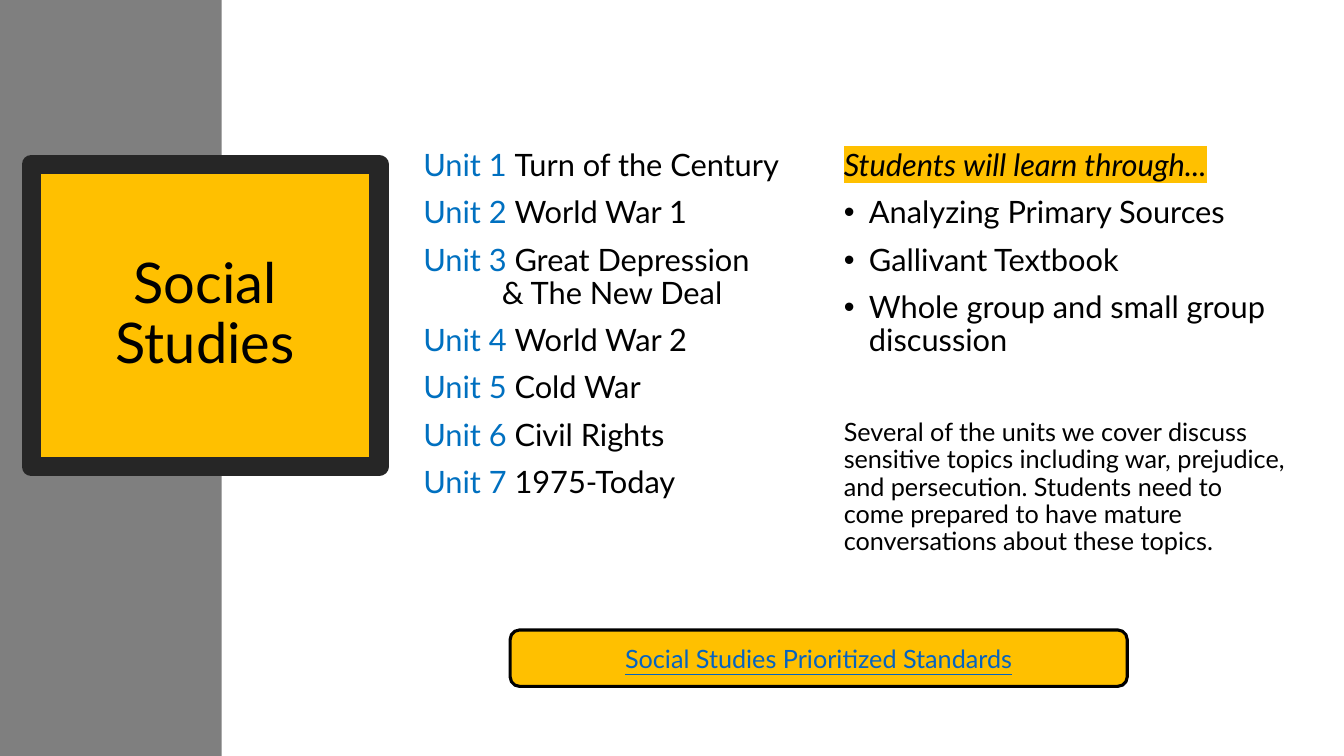
from lxml import etree
from pptx import Presentation
from pptx import util as u
from pptx.dml.color import RGBColor
from pptx.enum import shapes, text
from pptx.oxml import ns

THEME = {
    "font": "Lato",
    "black": "000000", "gray": "7F7F7F", "gold": "FFC000",
    "frame": "262626", "blue": "0070C0", "link": "0563C1",
    "title": 40, "body": 22, "small": 18,
    "spacing": 0.9, "before": 10, "note_before": 44,
}

TITLE = "Social Studies"
UNITS = [
    ["Turn of the Century"],
    ["World War 1"],
    ["Great Depression", "& The New Deal"],
    ["World War 2"],
    ["Cold War"],
    ["Civil Rights"],
    ["1975-Today"],
]
METHODS_HEADING = "Students will learn through..."
METHODS = [
    "Analyzing Primary Sources",
    "Gallivant Textbook",
    "Whole group and small group discussion",
]
NOTE = ("Several of the units we cover discuss sensitive topics including war, "
        "prejudice, and persecution. Students need to come prepared to have "
        "mature conversations about these topics.")
STANDARDS = "Social Studies Prioritized Standards"

PLACES = {
    "sidebar": (0, 0, 2.2, 7.5),
    "title": (0.31, 1.63, 3.45, 3),
    "units": (4.1, 1.44, 3.76, 3.63),
    "methods": (8.27, 1.44, 4.59, 4.06),
    "standards": (5.06, 6.25, 6.12, 0.56),
}
UNIT_INDENT = 0.78
BULLET_INDENT = 0.25


def color(name):
    return RGBColor.from_string(THEME[name])


def apply(target, values):
    for name, value in values.items():
        setattr(target, name, value)


def place(name):
    return [u.Inches(length) for length in PLACES[name]]


def add_panel(page, name, kind, fill, line=None, width=0):
    panel = page.shapes.add_shape(kind, *place(name))
    panel.shadow.inherit = False
    panel.fill.solid()
    panel.fill.fore_color.rgb = color(fill)
    if line:
        panel.line.color.rgb = color(line)
        panel.line.width = u.Pt(width)
    else:
        panel.line.fill.background()
    apply(panel.text_frame, {"word_wrap": True,
                             "vertical_anchor": text.MSO_ANCHOR.MIDDLE})
    return panel


def add_text_box(page, name):
    box = page.shapes.add_textbox(*place(name))
    box.text_frame.word_wrap = True
    return box


def add_para(box, before="before"):
    frame = box.text_frame
    para = frame.paragraphs[0]
    if para.runs:
        para = frame.add_paragraph()
    apply(para, {"line_spacing": THEME["spacing"],
                 "space_before": u.Pt(THEME[before])})
    return para


def add_span(para, words, size="body", ink="black", **extra):
    span = para.add_run()
    span.text = words
    apply(span.font, {"name": THEME["font"], "size": u.Pt(THEME[size]), **extra})
    span.font.color.rgb = color(ink)
    return span


def hang(para, indent):
    properties = para._p.get_or_add_pPr()
    properties.set("marL", str(u.Inches(indent)))
    properties.set("indent", str(-u.Inches(indent)))
    return properties


def add_bullet(para):
    properties = hang(para, BULLET_INDENT)
    etree.SubElement(properties, ns.qn("a:buFont")).set("typeface", "Arial")
    etree.SubElement(properties, ns.qn("a:buChar")).set("char", "•")


def highlight(span, name):
    fill = span._r.get_or_add_rPr().find(ns.qn("a:solidFill"))
    marker = etree.Element(ns.qn("a:highlight"))
    etree.SubElement(marker, ns.qn("a:srgbClr")).set("val", THEME[name])
    fill.addnext(marker)


def add_title(page):
    panel = add_panel(page, "title", shapes.MSO_SHAPE.RECTANGLE,
                      "gold", "frame", 13.75)
    etree.SubElement(panel.line._get_or_add_ln(), ns.qn("a:round"))
    apply(panel.text_frame, {"margin_left": u.Inches(0.5),
                             "margin_right": u.Inches(0.5)})
    para = panel.text_frame.paragraphs[0]
    apply(para, {"alignment": text.PP_ALIGN.CENTER,
                 "line_spacing": THEME["spacing"]})
    add_span(para, TITLE, "title")


def add_units(page):
    box = add_text_box(page, "units")
    for number, lines in enumerate(UNITS, 1):
        para = add_para(box)
        hang(para, UNIT_INDENT)
        add_span(para, f"Unit {number} ", ink="blue")
        for index, line in enumerate(lines):
            if index:
                para.add_line_break()
            add_span(para, line)


def add_methods(page):
    box = add_text_box(page, "methods")
    heading = add_span(add_para(box), METHODS_HEADING, italic=True)
    highlight(heading, "gold")
    for method in METHODS:
        para = add_para(box)
        add_bullet(para)
        add_span(para, method)
    add_span(add_para(box, "note_before"), NOTE, "small")


def add_standards(page):
    panel = add_panel(page, "standards", shapes.MSO_SHAPE.ROUNDED_RECTANGLE,
                      "gold", "black", 2.25)
    para = panel.text_frame.paragraphs[0]
    para.alignment = text.PP_ALIGN.CENTER
    add_span(para, STANDARDS, "small", "link", underline=True)


def main():
    deck = Presentation()
    apply(deck, {"slide_width": u.Inches(13.33), "slide_height": u.Inches(7.5)})
    page = deck.slides.add_slide(deck.slide_layouts[6])
    add_panel(page, "sidebar", shapes.MSO_SHAPE.RECTANGLE, "gray")
    add_title(page)
    add_standards(page)
    add_units(page)
    add_methods(page)
    deck.save("out.pptx")


if __name__ == "__main__":
    main()
